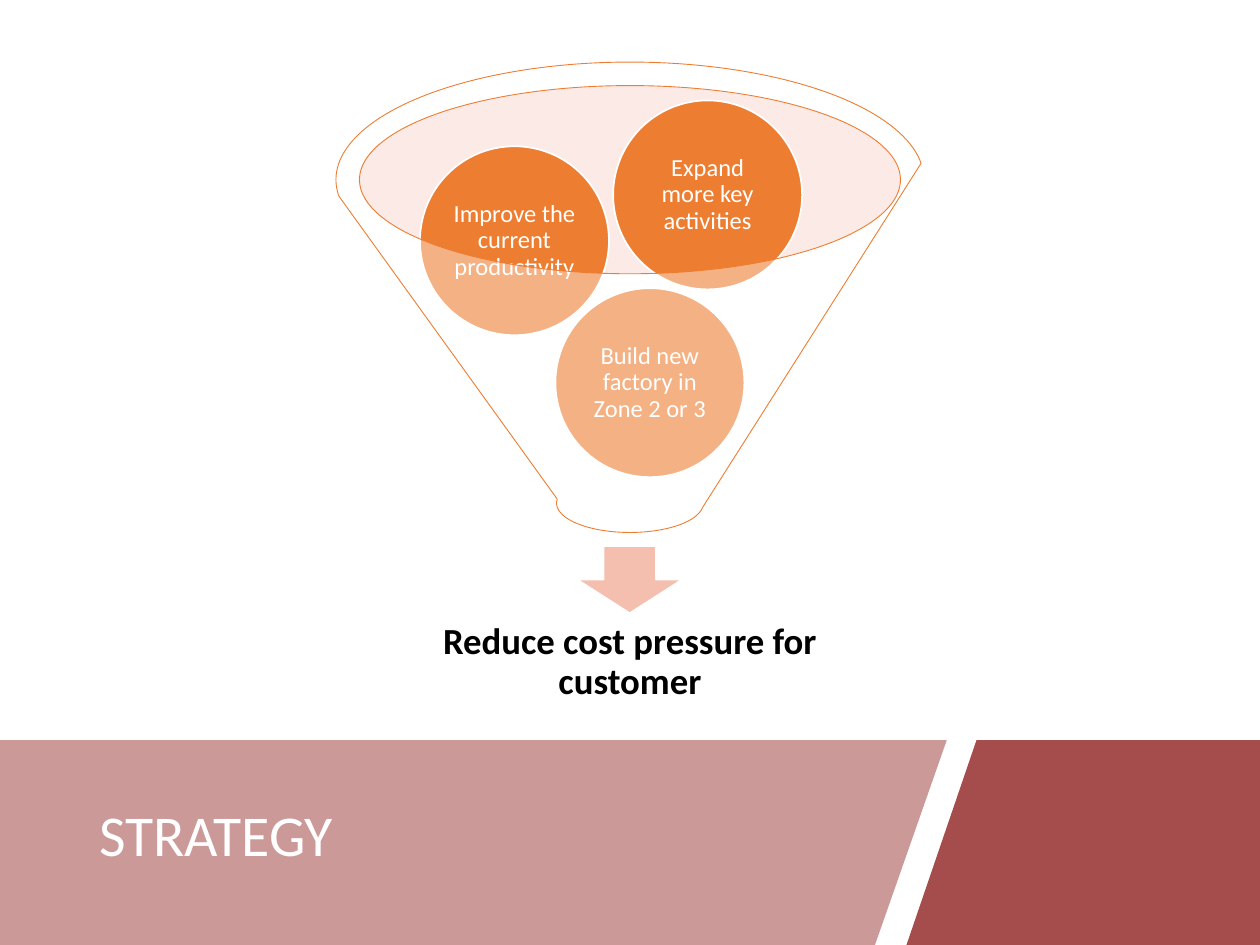
from lxml.etree import SubElement
from pptx import Presentation
from pptx.dml.color import RGBColor
from pptx.enum.shapes import MSO_SHAPE
from pptx.enum.text import MSO_ANCHOR, PP_ALIGN
from pptx.oxml.ns import qn
from pptx.util import Pt

WHITE = RGBColor(0xFF, 0xFF, 0xFF)
BLACK = RGBColor(0x00, 0x00, 0x00)
MAROON = RGBColor(0x80, 0x00, 0x00)
ORANGE = RGBColor(0xED, 0x7D, 0x31)
PEACH = RGBColor(0xF6, 0xCC, 0xBE)
SALMON = RGBColor(0xF4, 0xBF, 0xAE)

SLIDE_W, SLIDE_H = 720, 540
BAND_TOP = 422.8
CIRCLE = 108


def write(sp, text, size=14, color=WHITE, bold=False,
          align=PP_ALIGN.CENTER, inset=(1.4, 1.4), font="Calibri"):
    """Put one formatted paragraph into a shape; inset is (sides, top and bottom)."""
    tf = sp.text_frame
    tf.word_wrap = True
    tf.vertical_anchor = MSO_ANCHOR.MIDDLE
    tf.margin_left = tf.margin_right = Pt(inset[0])
    tf.margin_top = tf.margin_bottom = Pt(inset[1])
    p = tf.paragraphs[0]
    p.alignment = align
    p.line_spacing = 0.9
    r = p.add_run()
    r.text = text
    r.font.name = font
    r.font.size = Pt(size)
    r.font.bold = bold
    r.font.color.rgb = color


class Canvas:
    """Holds the style and the current slide."""

    font = "Calibri"

    def __init__(self, slide):
        self.s = slide

    def paint(self, sp, fill, opacity=100, line=None, width=1):
        sp.shadow.inherit = False
        sp.fill.solid()
        sp.fill.fore_color.rgb = fill
        if opacity < 100:
            clr = sp.fill._xPr.find(qn("a:solidFill"))[0]
            SubElement(clr, qn("a:alpha")).set("val", str(opacity * 1000))
        if line is None:
            sp.line.fill.background()
        else:
            sp.line.color.rgb = line
            sp.line.width = Pt(width)
        return sp

    def shape(self, kind, x, y, w, h, fill, **style):
        sp = self.s.shapes.add_shape(kind, Pt(x), Pt(y), Pt(w), Pt(h))
        return self.paint(sp, fill, **style)

    def polygon(self, points, fill, **style):
        fb = self.s.shapes.build_freeform(*points[0], scale=Pt(1))
        fb.add_line_segments(points[1:], close=True)
        return self.paint(fb.convert_to_shape(), fill, **style)

    def text(self, x, y, w, h, text, **fmt):
        sp = self.s.shapes.add_textbox(Pt(x), Pt(y), Pt(w), Pt(h))
        write(sp, text, font=self.font, **fmt)

    def circle(self, x, y, text):
        sp = self.shape(MSO_SHAPE.OVAL, x, y, CIRCLE, CIRCLE, ORANGE, line=WHITE)
        write(sp, text, font=self.font)


def main():
    prs = Presentation()
    prs.slide_width, prs.slide_height = Pt(SLIDE_W), Pt(SLIDE_H)
    c = Canvas(prs.slides.add_slide(prs.slide_layouts[6]))

    # Title band
    c.polygon([(0, BAND_TOP), (541, BAND_TOP), (500.5, SLIDE_H), (0, SLIDE_H)],
              MAROON, opacity=40)
    c.text(49.5, 435.6, 456, 86.4, "STRATEGY", size=33,
           align=PP_ALIGN.LEFT, inset=(7.2, 3.6))

    # Funnel mouth, outlet arrow and result
    c.shape(MSO_SHAPE.OVAL, 204.8, 49, 309.6, 107.3, PEACH, opacity=40)
    c.shape(MSO_SHAPE.DOWN_ARROW, 329.8, 312, 60, 38.4, SALMON, line=WHITE)
    c.text(216, 342.7, 288, 72, "Reduce cost pressure for customer",
           size=21, color=BLACK, bold=True, inset=(11.5, 11.5))

    # Inputs inside the funnel
    for x, y, label in [
        (317.4, 164.7, "Build new factory in Zone 2 or 3"),
        (240, 83.6, "Improve the current productivity"),
        (350.4, 57.4, "Expand more key activities"),
    ]:
        c.circle(x, y, label)

    # Funnel body over the inputs
    c.shape(MSO_SHAPE.FUNNEL, 192, 35.5, 336, 268.8, WHITE,
            opacity=40, line=ORANGE, width=0.5)

    # Right accent
    c.polygon([(558, BAND_TOP), (SLIDE_W, BAND_TOP), (SLIDE_W, SLIDE_H),
               (517.5, SLIDE_H)], MAROON, opacity=70)

    prs.save("out.pptx")


if __name__ == "__main__":
    main()
